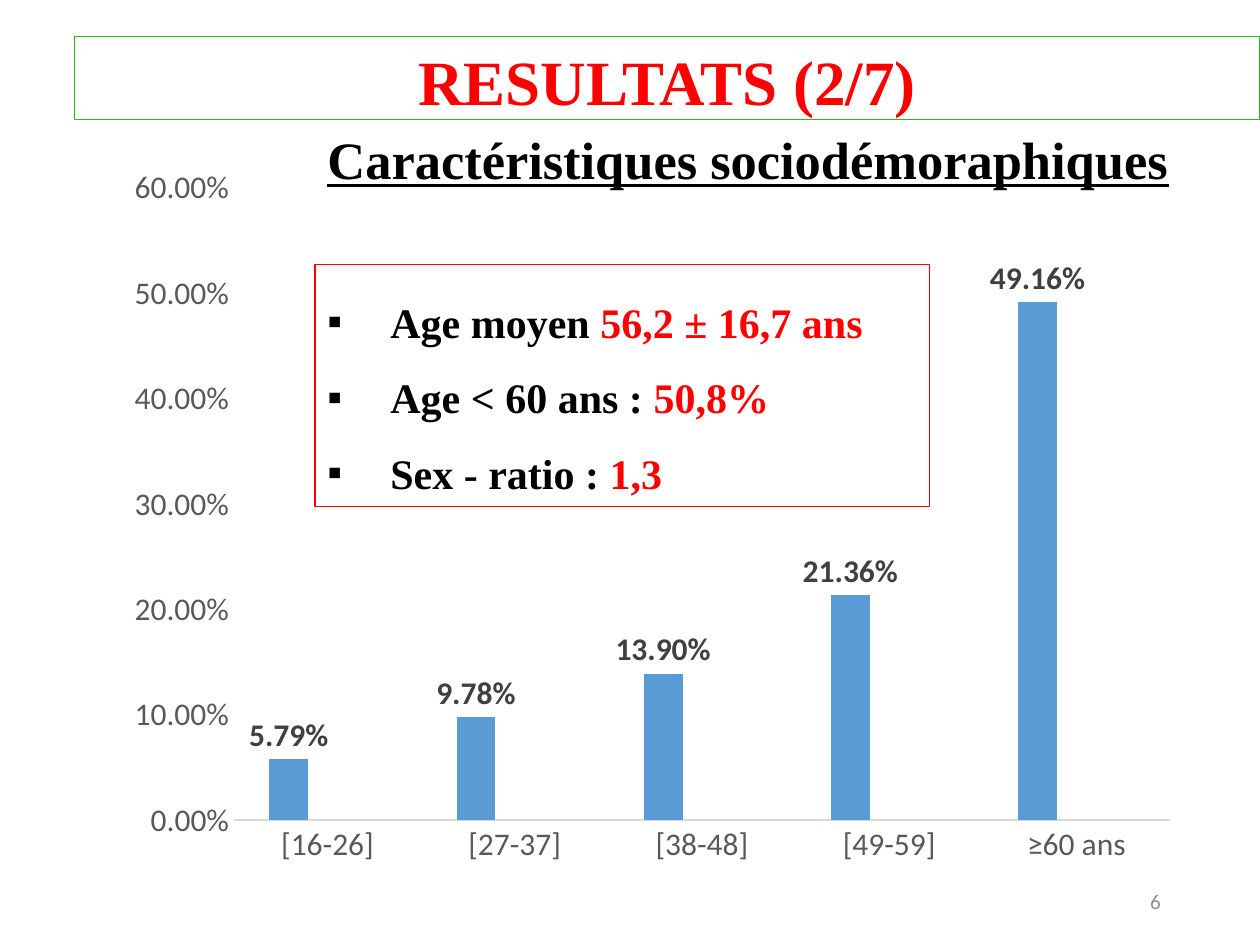
from lxml import etree
from pptx import Presentation
from pptx.chart.data import CategoryChartData
from pptx.dml.color import RGBColor
from pptx.enum.chart import XL_CHART_TYPE as ChartType, XL_LABEL_POSITION as LabelPosition
from pptx.enum.chart import XL_TICK_MARK as TickMark
from pptx.enum.shapes import MSO_SHAPE as Shape
from pptx.enum.text import MSO_ANCHOR as Anchor, MSO_AUTO_SIZE as AutoSize, PP_ALIGN as Align
from pptx.oxml import parse_xml
from pptx.oxml.ns import nsdecls, qn
from pptx.util import Inches, Pt

BLACK = RGBColor(0x00, 0x00, 0x00)
RED = RGBColor(0xFF, 0x00, 0x00)
GREEN = RGBColor(0x2B, 0xBE, 0x12)
BLUE = RGBColor(0x5B, 0x9B, 0xD5)
ORANGE = RGBColor(0xED, 0x7D, 0x31)
GREY = RGBColor(0xA5, 0xA5, 0xA5)
AXIS_TEXT = RGBColor(0x59, 0x59, 0x59)
AXIS_LINE = RGBColor(0xD9, 0xD9, 0xD9)
LABEL_TEXT = RGBColor(0x40, 0x40, 0x40)
PAGE_NUMBER = RGBColor(0x8C, 0x8C, 0x8C)

SERIF, SANS = "Times New Roman", "Calibri"
PERCENT = "0.00%"


def set_font(font, name, size, color, bold=False):
    font.name, font.size, font.bold = name, Pt(size), bold
    font.color.rgb = color


class SlideBuilder:
    def __init__(self, deck):
        self.page = deck.slides.add_slide(deck.slide_layouts[6])

    def frame(self, left, top, width, height, color):
        """Add an unfilled outlined rectangle and return its text frame."""
        box = self.page.shapes.add_shape(
            Shape.RECTANGLE, Inches(left), Inches(top), Inches(width), Inches(height))
        box.shadow.inherit = False
        box.fill.background()
        box.line.color.rgb = color
        box.line.width = Pt(0.75)
        box.text_frame.vertical_anchor = Anchor.TOP
        return box.text_frame

    def text_box(self, left, top, width, height):
        box = self.page.shapes.add_textbox(
            Inches(left), Inches(top), Inches(width), Inches(height))
        box.text_frame.word_wrap = True
        return box.text_frame

    def line_of_text(self, para, text, size, color, align=Align.LEFT, name=SERIF, bold=True):
        para.text = text
        para.alignment = align
        set_font(para.font, name, size, color, bold)

    def bullets(self, text_frame, items, size):
        """Fill the frame with label and value pairs, the values in red."""
        for index, (label, value) in enumerate(items):
            para = text_frame.add_paragraph() if index else text_frame.paragraphs[0]
            para.level = 1
            para.alignment = Align.JUSTIFY
            para.line_spacing = 1.5
            properties = para._p.get_or_add_pPr()
            properties.set("marL", str(Inches(0.5)))
            properties.set("indent", str(-Inches(0.5)))
            etree.SubElement(properties, qn("a:buFont"), typeface="Arial")
            etree.SubElement(properties, qn("a:buChar"), char="▪")
            for text, color in ((label, BLACK), (value, RED)):
                span = para.add_run()
                span.text = text
                set_font(span.font, SERIF, size, color, True)

    def column_chart(self, left, top, width, height, categories, series, plot_area):
        data = CategoryChartData(number_format=PERCENT)
        data.categories = categories
        for name, values, _ in series:
            data.add_series(name, values)
        chart = self.page.shapes.add_chart(
            ChartType.COLUMN_CLUSTERED, Inches(left), Inches(top),
            Inches(width), Inches(height), data).chart
        set_font(chart.font, SANS, 10, BLACK)
        chart.has_legend = chart.has_title = False

        plot = chart.plots[0]
        plot.gap_width, plot.overlap = 182, 0
        plot.vary_by_categories = False
        for column, (_, _, color) in zip(plot.series, series):
            column.format.fill.solid()
            column.format.fill.fore_color.rgb = color
        labels = plot.series[0].data_labels
        labels.show_value = True
        labels.number_format, labels.number_format_is_linked = PERCENT, False
        labels.position = LabelPosition.OUTSIDE_END
        set_font(labels.font, SANS, 18, LABEL_TEXT, True)

        for axis in (chart.category_axis, chart.value_axis):
            axis.major_tick_mark = axis.minor_tick_mark = TickMark.NONE
            axis.has_major_gridlines = False
            set_font(axis.tick_labels.font, SANS, 18, AXIS_TEXT)
        chart.category_axis.format.line.color.rgb = AXIS_LINE
        chart.category_axis.format.line.width = Pt(0.75)
        values_axis = chart.value_axis
        values_axis.format.line.fill.background()
        values_axis.minimum_scale, values_axis.maximum_scale = 0, 0.6
        values_axis.major_unit = 0.1
        values_axis.tick_labels.number_format = PERCENT
        values_axis.tick_labels.number_format_is_linked = False
        self.place_plot(chart, plot_area)

    def place_plot(self, chart, plot_area):
        """Fix the inner plot area, given as fractions of the chart."""
        sizes = "".join(f'<c:{tag} val="{value}"/>' for tag, value in zip("xywh", plot_area))
        layout = parse_xml(
            f'<c:layout {nsdecls("c")}><c:manualLayout><c:layoutTarget val="inner"/>'
            f'<c:xMode val="edge"/><c:yMode val="edge"/>{sizes}</c:manualLayout></c:layout>')
        area = chart._chartSpace.chart.plotArea
        for old in area.findall(qn("c:layout")):
            area.remove(old)
        area.insert(0, layout)


def main():
    deck = Presentation()
    deck.slide_width, deck.slide_height = Inches(10), Inches(7.5)
    builder = SlideBuilder(deck)

    number = builder.text_box(7.06, 6.95, 2.25, 0.4)
    number.vertical_anchor = Anchor.MIDDLE
    builder.line_of_text(number.paragraphs[0], "6", 12, PAGE_NUMBER, Align.RIGHT, SANS, False)

    ages = ["[16-26]", "[27-37]", "[38-48]", "[49-59]", "≥60 ans"]
    empty = [None] * len(ages)
    builder.column_chart(
        0.77, 0.94, 9.06, 6.12, ages,
        [("Series 1", [0.0579, 0.0978, 0.139, 0.2136, 0.4916], BLUE),
         ("Series 2", empty, ORANGE),
         ("Series 3", empty, GREY)],
        (0.12, 0.09, 0.82, 0.82))

    title = builder.frame(0.59, 0.29, 9.41, 0.66, GREEN)
    builder.line_of_text(title.paragraphs[0], "RESULTATS (2/7)", 36, RED, Align.CENTER)

    facts = builder.frame(2.5, 2.1, 4.88, 1.92, RED)
    facts.auto_size = AutoSize.SHAPE_TO_FIT_TEXT
    builder.bullets(facts, [("Age moyen ", "56,2 ± 16,7 ans "),
                            ("Age < 60 ans : ", "50,8% "),
                            ("Sex - ratio : ", "1,3")], 24)

    subtitle = builder.text_box(2.5, 0.71, 7.41, 0.77)
    subtitle.auto_size = AutoSize.SHAPE_TO_FIT_TEXT
    heading = subtitle.paragraphs[0]
    heading.line_spacing = 1.5
    builder.line_of_text(heading, "Caractéristiques sociodémoraphiques", 30, BLACK)
    heading.font.underline = True

    deck.save("out.pptx")


if __name__ == "__main__":
    main()
